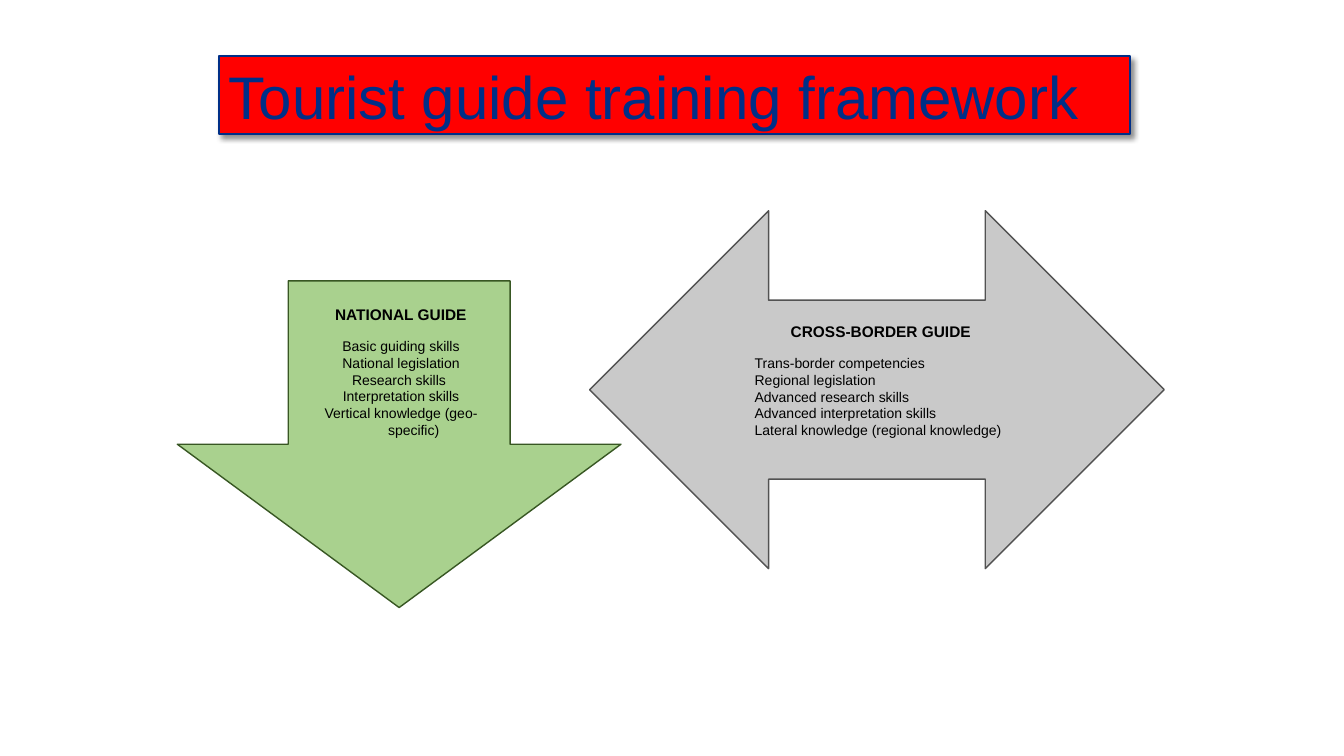
from lxml.etree import SubElement
from pptx import Presentation
from pptx.dml.color import RGBColor
from pptx.enum.shapes import MSO_SHAPE
from pptx.enum.text import MSO_ANCHOR, MSO_AUTO_SIZE, PP_ALIGN
from pptx.oxml.ns import qn
from pptx.util import Cm, Pt

TITLE = "Tourist guide training framework"
TITLE_BOX = (5.51, 1.42, 22.96, 1.96)
GUIDES = [
    dict(head="NATIONAL GUIDE",
         skills=["Basic guiding skills", "National legislation",
                 "Research skills ", "Interpretation skills",
                 "Vertical knowledge (geo-specific)"],
         kind=MSO_SHAPE.DOWN_ARROW, fill="green", line="forest",
         align=PP_ALIGN.CENTER,
         arrow=(4.47, 7.08, 11.18, 8.23), label=(7.92, 7.49, 4.37, 5.31)),
    dict(head="CROSS-BORDER GUIDE",
         skills=["Trans-border competencies", "Regional legislation",
                 "Advanced research skills", "Advanced interpretation skills",
                 "Lateral knowledge (regional knowledge)"],
         kind=MSO_SHAPE.LEFT_RIGHT_ARROW, fill="silver", line="gray",
         align=PP_ALIGN.LEFT,
         arrow=(14.86, 5.31, 14.48, 9.02), label=(18.77, 7.92, 6.86, 3.86)),
]
COLORS = {"red": "FF0000", "navy": "002F87", "black": "000000",
          "green": "A9D18E", "forest": "385723",
          "silver": "C9C9C9", "gray": "525252"}


def color(name):
    return RGBColor.from_string(COLORS[name])


def paint(shape, fill, line=None, width=1):
    shape.fill.solid()
    shape.fill.fore_color.rgb = color(fill)
    if line:
        shape.line.color.rgb = color(line)
        shape.line.width = Pt(width)
    else:
        shape.line.fill.background()


def write(para, text, size, ink="black", bold=False, align=PP_ALIGN.LEFT,
          space=1.0, after=0, hang=0):
    """Fill a paragraph; hang is the depth of its hanging indent in cm."""
    run = para.add_run()
    run.text = text
    para.alignment = align
    para.line_spacing = space
    para.space_before = Pt(0)
    para.space_after = Pt(after)
    if hang:
        props = para._p.get_or_add_pPr()
        props.set("marL", str(Cm(hang)))
        props.set("indent", str(-Cm(hang)))
    font = run.font
    font.name, font.size, font.bold = "Arial", Pt(size), bold
    font.color.rgb = color(ink)


def cast(shape):
    """Give a shape a soft shadow to its lower right."""
    effects = SubElement(shape._element.spPr, qn("a:effectLst"))
    shade = SubElement(effects, qn("a:outerShdw"), blurRad=str(Pt(4)),
                       dist=str(Pt(3)), dir="2700000", algn="tl",
                       rotWithShape="0")
    tint = SubElement(shade, qn("a:srgbClr"), val=COLORS["black"])
    SubElement(tint, qn("a:alpha"), val="43000")


def add_title(slide):
    title = slide.shapes.title
    title.left, title.top, title.width, title.height = map(Cm, TITLE_BOX)
    paint(title, "red", "navy", 1.5)
    cast(title)
    frame = title.text_frame
    frame.auto_size = MSO_AUTO_SIZE.NONE
    frame.vertical_anchor = MSO_ANCHOR.MIDDLE
    write(frame.paragraphs[0], TITLE, 42.9, ink="navy")


def add_guide(slide, guide):
    group = slide.shapes.add_group_shape()
    arrow = group.shapes.add_shape(guide["kind"], *map(Cm, guide["arrow"]))
    paint(arrow, guide["fill"], guide["line"])
    label = group.shapes.add_shape(MSO_SHAPE.RECTANGLE,
                                   *map(Cm, guide["label"]))
    paint(label, guide["fill"])
    for shape in (arrow, label):
        shape.shadow.inherit = False
    frame = label.text_frame
    frame.word_wrap = True
    frame.vertical_anchor = MSO_ANCHOR.TOP
    write(frame.paragraphs[0], guide["head"], 11, bold=True,
          align=PP_ALIGN.CENTER, space=1.15, after=10)
    for skill in guide["skills"]:
        write(frame.add_paragraph(), skill, 10, align=guide["align"],
              hang=0.64)


def main():
    deck = Presentation()
    deck.slide_width, deck.slide_height = Cm(33.87), Cm(19.05)
    slide = deck.slides.add_slide(deck.slide_layouts[5])
    add_title(slide)
    for guide in GUIDES:
        add_guide(slide, guide)
    deck.save("out.pptx")


if __name__ == "__main__":
    main()
